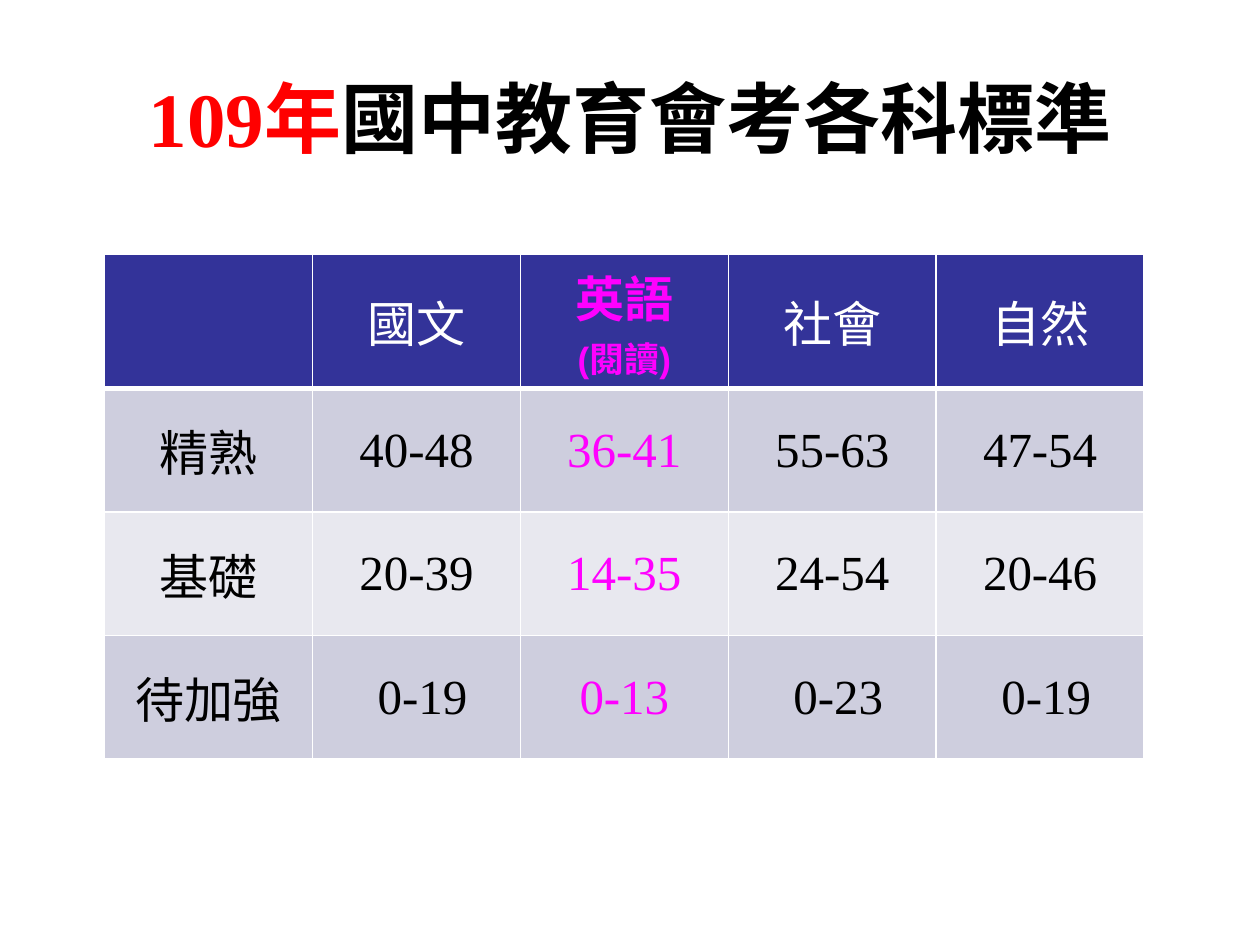
from dataclasses import dataclass

from lxml import etree
from pptx import Presentation
from pptx.dml.color import RGBColor
from pptx.enum.text import MSO_ANCHOR, PP_ALIGN
from pptx.oxml.ns import qn
from pptx.util import Inches, Pt

CENTER = PP_ALIGN.CENTER
MIDDLE = MSO_ANCHOR.MIDDLE


@dataclass(frozen=True)
class Theme:
    sans: str = "Arial"
    serif: str = "Times New Roman"
    white: str = "FFFFFF"
    black: str = "000000"
    red: str = "FF0000"
    magenta: str = "FF00FF"
    header: str = "333399"
    bands: tuple = ("CECEDE", "E8E8EF")
    title_size: int = 44
    body_size: int = 28
    note_size: int = 20


theme = Theme()


def format_span(span, name, size, color, bold=False):
    span.font.name = name
    span.font.size = Pt(size)
    span.font.bold = bold
    span.font.color.rgb = RGBColor.from_string(color)


def set_borders(cell, bottom_width):
    properties = cell._tc.get_or_add_tcPr()
    for side, width in (("L", 1), ("R", 1), ("T", 1), ("B", bottom_width)):
        line = etree.SubElement(properties, qn(f"a:ln{side}"), w=str(Pt(width)))
        fill = etree.SubElement(line, qn("a:solidFill"))
        etree.SubElement(fill, qn("a:srgbClr"), val=theme.white)


deck = Presentation()
deck.slide_width = Inches(10)
deck.slide_height = Inches(7.5)
page = deck.slides.add_slide(deck.slide_layouts[5])

title = page.shapes.title
title.left, title.top = Inches(0.91), Inches(0.3)
title.width, title.height = Inches(8.19), Inches(1.25)
title.text_frame.vertical_anchor = MIDDLE
para = title.text_frame.paragraphs[0]
para.alignment = CENTER
for text, color in (("109年", theme.red), ("國中教育會考各科標準", theme.black)):
    span = para.add_run()
    span.text = text
    format_span(span, theme.serif, theme.title_size, color, bold=True)

scores = [
    ["", "國文", "英語\n(閱讀)", "社會", "自然"],
    ["精熟", "40-48", "36-41", "55-63", "47-54"],
    ["基礎", "20-39", "14-35", "24-54", "20-46"],
    ["待加強", " 0-19", "0-13", " 0-23", " 0-19"],
]
ENGLISH_COLUMN = 2
LAST_ROW = len(scores) - 1

table = page.shapes.add_table(
    len(scores), len(scores[0]), Inches(0.83), Inches(2.02), Inches(8.27), Inches(3.94)
).table
for column in table.columns:
    column.width = Inches(1.65)
for row in table.rows:
    row.height = Inches(0.98)

for row_index, row_texts in enumerate(scores):
    is_header = row_index == 0
    for column_index, text in enumerate(row_texts):
        cell = table.cell(row_index, column_index)
        is_english = column_index == ENGLISH_COLUMN
        is_score = not is_header and column_index > 0
        set_borders(cell, 3 if is_header else 1)
        cell.fill.solid()
        fill_color = theme.header if is_header else theme.bands[(row_index - 1) % 2]
        cell.fill.fore_color.rgb = RGBColor.from_string(fill_color)
        cell.vertical_anchor = MIDDLE
        wide_margin = is_header or (row_index == LAST_ROW and is_score)
        cell.margin_left = cell.margin_right = Inches(0.1 if wide_margin else 0.02)
        cell.margin_top = cell.margin_bottom = Inches(0.05 if wide_margin else 0)
        color = theme.white if is_header else theme.black
        if is_english:
            color = theme.magenta
        cell.text_frame.text = text
        for line_index, para in enumerate(cell.text_frame.paragraphs):
            para.alignment = CENTER
            size = theme.note_size if line_index else theme.body_size
            for span in para.runs:
                format_span(span, theme.serif if is_score else theme.sans, size,
                            color, bold=is_header and is_english)

deck.save("out.pptx")
